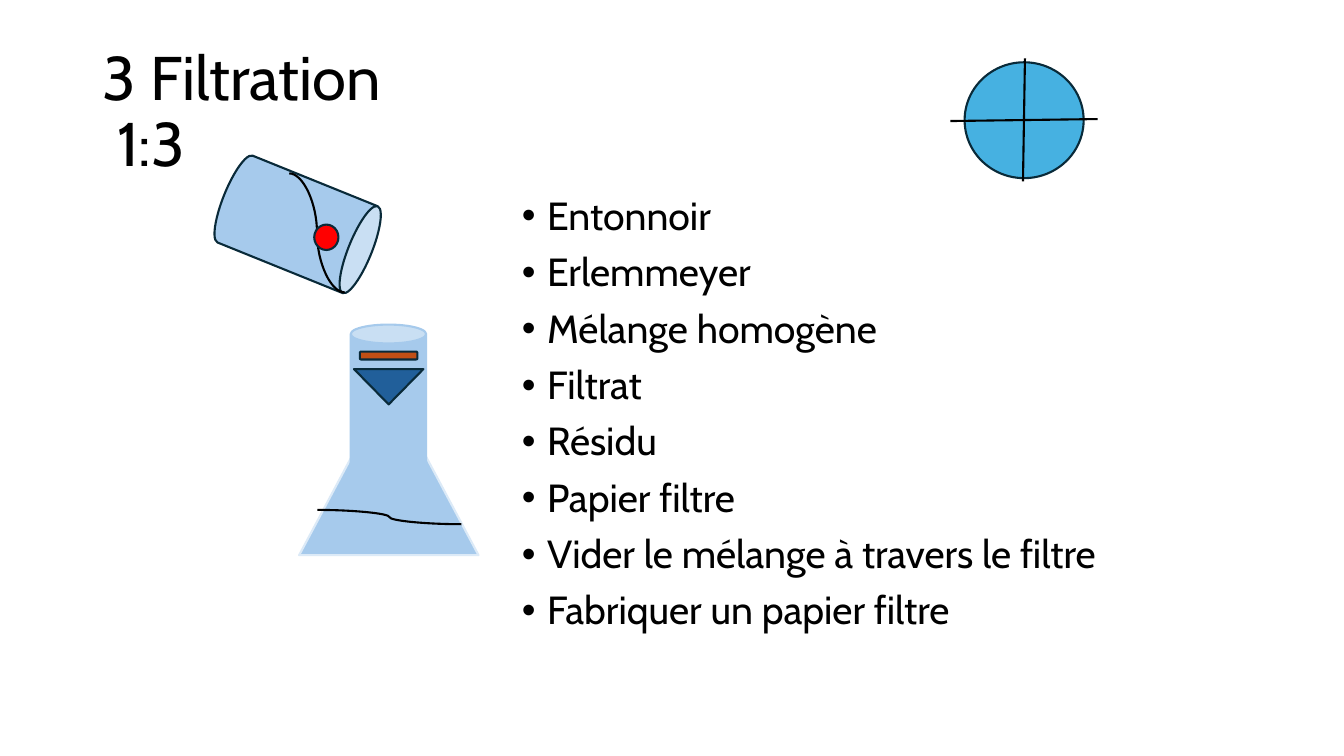
from dataclasses import dataclass

from pptx import Presentation
from pptx.dml.color import RGBColor
from pptx.enum.shapes import MSO_CONNECTOR as Connector, MSO_SHAPE as Preset
from pptx.enum.text import MSO_ANCHOR as Anchor
from pptx.oxml.ns import qn
from pptx.util import Cm, Pt
from lxml.etree import SubElement


@dataclass(frozen=True)
class Theme:
    font: str = "Cabin"
    title_size: int = 44
    body_size: int = 28
    line_width: float = 1.5
    text: str = "000000"
    outline: str = "092A39"
    glass: str = "A6CAEC"
    glass_edge: str = "DCEAF7"
    funnel: str = "215F9A"
    residue: str = "C04F15"
    solid: str = "FF0000"
    paper: str = "46B1E1"


THEME = Theme()
INGREDIENTS = [
    "Entonnoir",
    "Erlemmeyer",
    "Mélange homogène",
    "Filtrat",
    "Résidu",
    "Papier filtre",
    "Vider le mélange à travers le filtre",
    "Fabriquer un papier filtre",
]


def color(value):
    return RGBColor.from_string(value)


def add_text(slide, box, lines, size, anchor=Anchor.TOP):
    frame = slide.shapes.add_textbox(*map(Cm, box)).text_frame
    frame.word_wrap = True
    frame.vertical_anchor = anchor
    frame.text = "\n".join(lines)
    for paragraph in frame.paragraphs:
        paragraph.line_spacing = 0.9
        paragraph.font.name = THEME.font
        paragraph.font.size = Pt(size)
        paragraph.font.color.rgb = color(THEME.text)
    return frame.paragraphs


def set_indent(paragraph, left, first=0):
    properties = paragraph._p.get_or_add_pPr()
    properties.set("marL", str(Cm(left)))
    properties.set("indent", str(Cm(first)))
    return properties


def add_title(slide):
    box = (2.34, 1.02, 29.21, 3.68)
    lines = ["3 Filtration", "1:3"]
    paragraphs = add_text(slide, box, lines, THEME.title_size, Anchor.MIDDLE)
    set_indent(paragraphs[1], 0.36)


def add_bullets(slide):
    box = (12.9, 4.83, 18.62, 12.32)
    for paragraph in add_text(slide, box, INGREDIENTS, THEME.body_size):
        paragraph.space_before = Pt(10)
        properties = set_indent(paragraph, 0.64, -0.64)
        bullet_font = SubElement(properties, qn("a:buFont"))
        bullet_font.set("typeface", "Arial")
        bullet = SubElement(properties, qn("a:buChar"))
        bullet.set("char", "•")
        properties.append(properties.find(qn("a:defRPr")))


def add_shape(slide, preset, box, fill, line=THEME.outline, rotation=0):
    shape = slide.shapes.add_shape(preset, *map(Cm, box))
    shape.shadow.inherit = False
    shape.rotation = rotation
    shape.fill.solid()
    shape.fill.fore_color.rgb = color(fill)
    shape.line.color.rgb = color(line)
    shape.line.width = Pt(THEME.line_width)


def add_line(slide, ends, kind=Connector.STRAIGHT):
    connector = slide.shapes.add_connector(kind, *map(Cm, ends))
    connector.line.color.rgb = color(THEME.text)
    connector.line.width = Pt(THEME.line_width)
    SubElement(connector._element.spPr, qn("a:effectLst"))


def add_glassware(slide):
    add_shape(slide, Preset.ISOSCELES_TRIANGLE, (7.54, 9.75, 4.52, 4.24),
              THEME.glass, THEME.glass_edge)
    add_shape(slide, Preset.CAN, (8.84, 8.18, 1.9, 4.04),
              THEME.glass, THEME.glass)
    add_shape(slide, Preset.CAN, (6.32, 3.66, 2.36, 3.99),
              THEME.glass, rotation=112)
    add_line(slide, (7.29, 4.37, 8.69, 7.37), Connector.CURVE)
    add_line(slide, (8, 12.85, 11.63, 13.21), Connector.CURVE)


def add_filter(slide):
    add_shape(slide, Preset.ISOSCELES_TRIANGLE, (8.92, 9.3, 1.75, 0.89),
              THEME.funnel, rotation=180)
    add_shape(slide, Preset.ROUNDED_RECTANGLE, (9.07, 8.86, 1.45, 0.2),
              THEME.residue)
    add_shape(slide, Preset.OVAL, (7.92, 5.66, 0.61, 0.64), THEME.solid)


def add_folded_paper(slide):
    add_shape(slide, Preset.OVAL, (24.31, 1.57, 3, 2.92), THEME.paper)
    add_line(slide, (27.66, 3, 23.95, 3.05))
    add_line(slide, (25.78, 4.57, 25.83, 1.47))


def main():
    presentation = Presentation()
    presentation.slide_width = Cm(33.87)
    presentation.slide_height = Cm(19.05)
    slide = presentation.slides.add_slide(presentation.slide_layouts[6])
    add_title(slide)
    add_bullets(slide)
    add_glassware(slide)
    add_filter(slide)
    add_folded_paper(slide)
    presentation.save("out.pptx")


if __name__ == "__main__":
    main()
